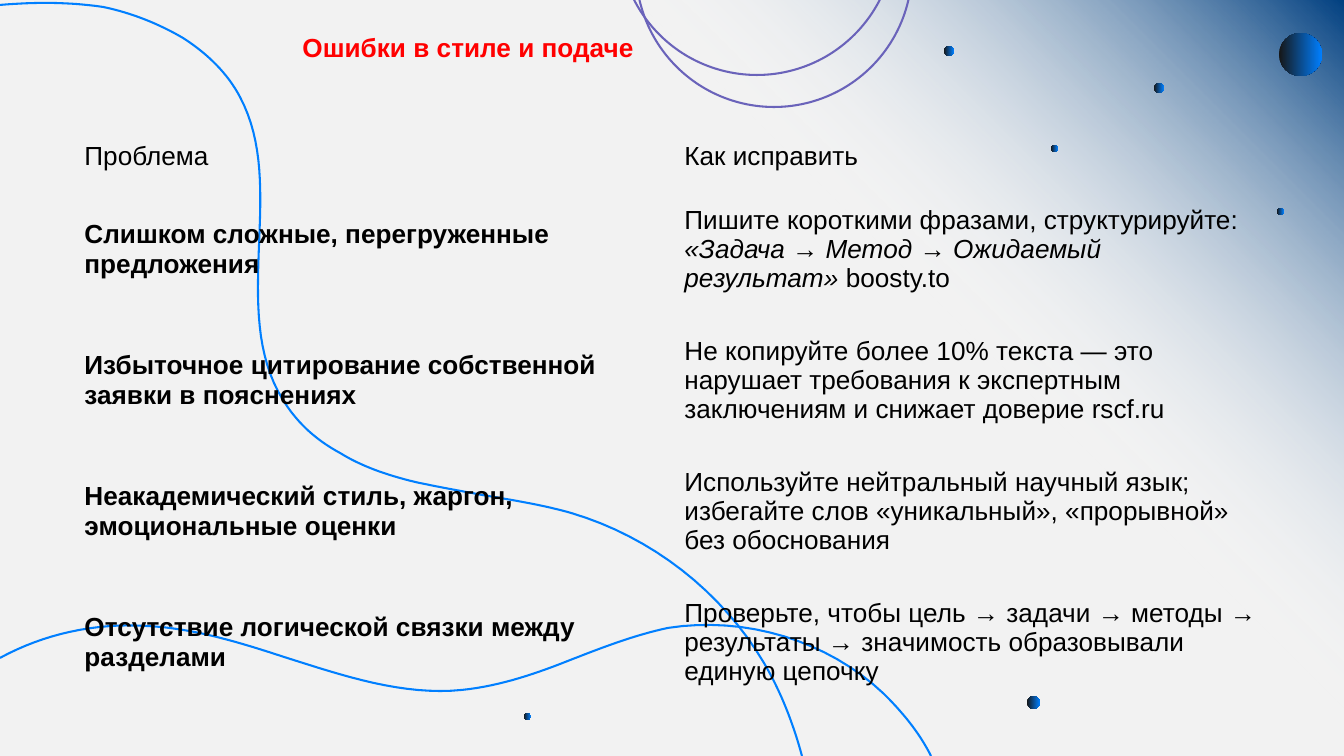
import lxml.etree
import pptx
import pptx.dml.color
import pptx.enum.shapes
import pptx.enum.text
import pptx.oxml.ns
import pptx.util

PX_PER_INCH = 134.4
NO_GRID_STYLE = "{2D5ABB26-0587-4C30-8999-92F81FD0307C}"
TEXT = {"name": "Arial", "size": pptx.util.Pt(14), "bold": False, "italic": False}

# Each wave: a starting point, then cubic pieces (two controls and an end point)
WAVES = [
    ((0, 5), [
        (35, 2, 69, 2, 103, 7), (132, 13, 159, 24, 183, 38),
        (208, 54, 228, 74, 240, 97), (264, 142, 261, 195, 259, 246),
        (257, 300, 255, 355, 283, 400), (296, 421, 314, 439, 340, 453),
        (361, 466, 386, 475, 415, 482), (438, 487, 461, 491, 482, 495),
        (512, 500, 543, 505, 571, 513), (652, 537, 722, 592, 764, 663),
        (781, 692, 793, 723, 802, 756)]),
    ((0, 658), [
        (44, 634, 95, 623, 145, 626), (194, 628, 241, 643, 287, 658),
        (344, 676, 403, 696, 462, 690), (501, 686, 538, 673, 573, 659),
        (604, 647, 635, 635, 668, 628), (745, 616, 827, 640, 884, 694),
        (902, 712, 919, 732, 931, 756)]),
]
# Left, top, diameter
DOTS = [(944, 46, 10), (1027, 696, 13), (1154, 83, 10), (1277, 208, 7),
        (524, 713, 7), (1051, 145, 7), (1279, 33, 43)]
RINGS = [(636, -169, 276), (619, -201, 276)]

# Each cell is a list of (text, format) runs
BOLD = {"bold": True}
ROWS = [
    ([("Проблема", {})], [("Как исправить", {})]),
    ([("Слишком сложные, перегруженные предложения", BOLD)],
     [("Пишите короткими фразами, структурируйте: ", {}),
      ("«Задача → Метод → Ожидаемый результат»", {"italic": True}),
      (" boosty.to", {})]),
    ([("Избыточное цитирование собственной заявки в пояснениях", BOLD)],
     [("Не копируйте более 10% текста — это нарушает требования к экспертным "
       "заключениям и снижает доверие rscf.ru", {})]),
    ([("Неакадемический стиль, жаргон, эмоциональные оценки", BOLD)],
     [("Используйте нейтральный научный язык; избегайте слов «уникальный», "
       "«прорывной» без обоснования", {})]),
    ([("Отсутствие логической связки между разделами", BOLD)],
     [("Проверьте, чтобы цель → задачи → методы → результаты → значимость "
       "образовывали единую цепочку", {})]),
]


def px(value):
    return pptx.util.Emu(round(value * pptx.util.Inches(1) / PX_PER_INCH))


def rgb(value):
    return pptx.dml.color.RGBColor.from_string(value)


def curve_points(start, pieces, steps=16):
    """Return points along a chain of cubic curves, without the start."""
    points = []
    x0, y0 = start
    for x1, y1, x2, y2, x3, y3 in pieces:
        for step in range(1, steps + 1):
            t = step / steps
            a, b, c, d = (1 - t) ** 3, 3 * t * (1 - t) ** 2, 3 * t * t * (1 - t), t ** 3
            points.append((a * x0 + b * x1 + c * x2 + d * x3,
                           a * y0 + b * y1 + c * y2 + d * y3))
        x0, y0 = x3, y3
    return points


class SlideBuilder:
    """Holds the colours, the text style and the current slide."""
    blue, violet, black, red = "007FFF", "6A63BA", "000000", "FF0000"
    line_width = pptx.util.Pt(1.1)

    def __init__(self, slide, background):
        self.slide = slide
        slide.background.fill.solid()
        slide.background.fill.fore_color.rgb = rgb(background)

    def outline(self, shape, color):
        shape.shadow.inherit = False
        shape.fill.background()
        shape.line.color.rgb = rgb(color)
        shape.line.width = self.line_width

    def gradient_shape(self, kind, box, stops, angle):
        """Stops are (percent, colour, opacity percent)."""
        shape = self.slide.shapes.add_shape(kind, *map(px, box))
        shape.shadow.inherit = False
        shape.line.fill.background()
        shape.fill.gradient()
        shape.fill.gradient_angle = angle
        qn = pptx.oxml.ns.qn
        stop_list = next(shape._element.iter(qn("a:gsLst")))
        for stop in list(stop_list):
            stop_list.remove(stop)
        for position, color, opacity in stops:
            stop = lxml.etree.SubElement(stop_list, qn("a:gs"), pos=str(position * 1000))
            value = lxml.etree.SubElement(stop, qn("a:srgbClr"), val=color)
            if opacity < 100:
                lxml.etree.SubElement(value, qn("a:alpha"), val=str(opacity * 1000))

    def dot(self, left, top, size):
        self.gradient_shape(pptx.enum.shapes.MSO_SHAPE.OVAL, (left, top, size, size),
                            [(0, "161616", 100), (100, self.blue, 100)], 0)

    def ring(self, left, top, size):
        box = map(px, (left, top, size, size))
        oval = self.slide.shapes.add_shape(pptx.enum.shapes.MSO_SHAPE.OVAL, *box)
        self.outline(oval, self.violet)

    def wave(self, start, pieces):
        builder = self.slide.shapes.build_freeform(*map(px, start))
        points = [(px(x), px(y)) for x, y in curve_points(start, pieces)]
        builder.add_line_segments(points, close=False)
        self.outline(builder.convert_to_shape(), self.blue)

    def add_runs(self, paragraph, runs, color):
        paragraph.alignment = pptx.enum.text.PP_ALIGN.LEFT
        for text, changes in runs:
            run = paragraph.add_run()
            run.text = text
            for name, value in {**TEXT, **changes}.items():
                setattr(run.font, name, value)
            run.font.color.rgb = rgb(color)

    def title(self, text, left, top, width, height):
        shape = self.slide.shapes.title
        box = {"left": left, "top": top, "width": width, "height": height}
        for name, value in box.items():
            setattr(shape, name, px(value))
        frame = shape.text_frame
        frame.word_wrap = False
        frame.auto_size = pptx.enum.text.MSO_AUTO_SIZE.SHAPE_TO_FIT_TEXT
        self.add_runs(frame.paragraphs[0], [(text, BOLD)], self.red)
        self.slide.shapes._spTree.append(shape._element)  # bring to front

    def table(self, rows, left, top, column_widths, row_heights):
        box = map(px, (left, top, sum(column_widths), sum(row_heights)))
        table = self.slide.shapes.add_table(len(rows), len(column_widths), *box).table
        table.first_row = table.horz_banding = False
        table._tbl.tblPr[0].text = NO_GRID_STYLE
        for column, width in zip(table.columns, column_widths):
            column.width = px(width)
        for row, height, contents in zip(table.rows, row_heights, rows):
            row.height = px(height)
            for cell, runs in zip(row.cells, contents):
                cell.fill.background()
                cell.vertical_anchor = pptx.enum.text.MSO_ANCHOR.MIDDLE
                self.add_runs(cell.text_frame.paragraphs[0], runs, self.black)


def main():
    presentation = pptx.Presentation()
    presentation.slide_width, presentation.slide_height = px(1344), px(756)
    slide = presentation.slides.add_slide(presentation.slide_layouts[5])
    builder = SlideBuilder(slide, "F2F2F2")
    builder.gradient_shape(
        pptx.enum.shapes.MSO_SHAPE.RECTANGLE, (546, 0, 798, 784),
        [(0, "FFFFFF", 0), (55, "FFFFFF", 0), (100, "003F80", 100)], 45)
    for start, pieces in WAVES:
        builder.wave(start, pieces)
    for dot in DOTS:
        builder.dot(*dot)
    for ring in RINGS:
        builder.ring(*ring)
    builder.title("Ошибки в стиле и подаче", 289, 24, 362, 46)
    builder.table(ROWS, 71, 129, [600] * 2, [55] + [131] * 4)
    presentation.save("out.pptx")


if __name__ == "__main__":
    main()
